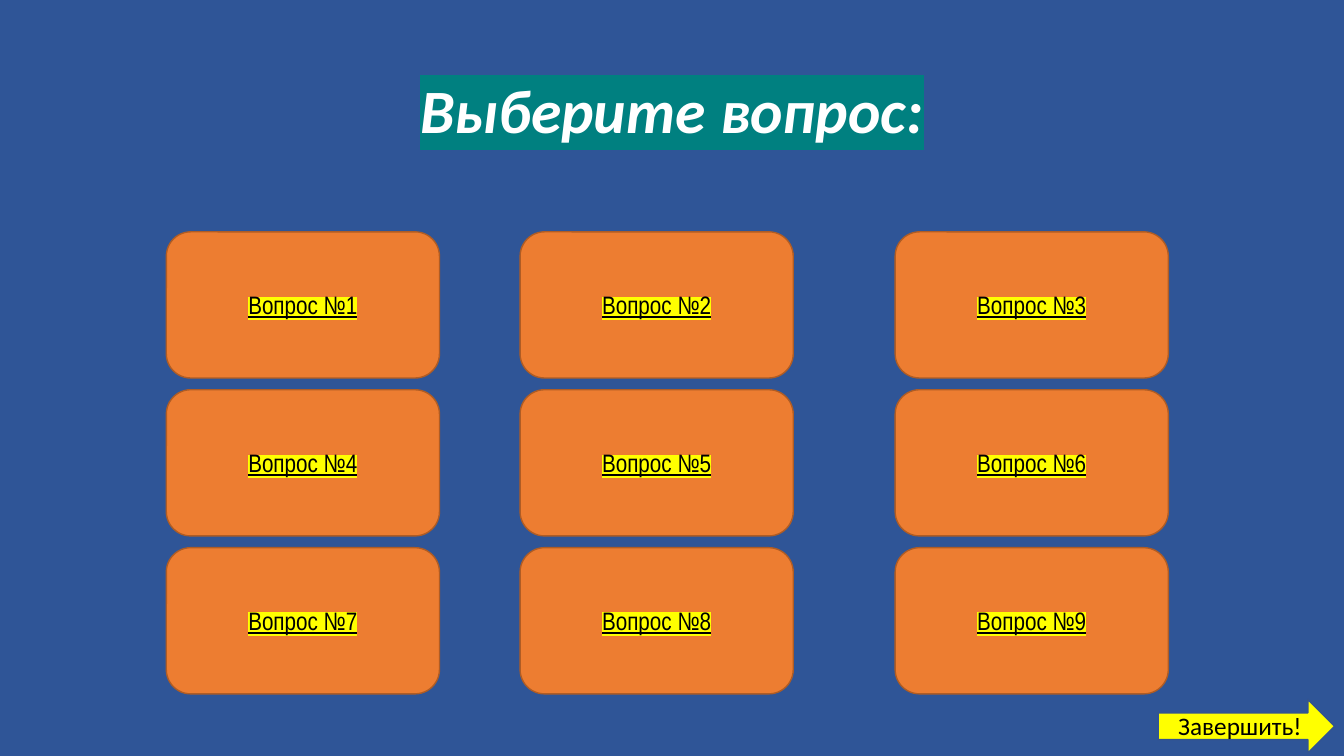
"""Builds a quiz menu slide with a grid of question buttons."""
from lxml.etree import SubElement
from pptx import Presentation
from pptx.dml.color import RGBColor as RGB
from pptx.enum.shapes import MSO_SHAPE as SHAPE
from pptx.enum.text import MSO_ANCHOR as ANCHOR, PP_ALIGN as ALIGN
from pptx.oxml.ns import qn
from pptx.util import Pt

TITLE = "Выберите вопрос:"
QUESTIONS = [f"Вопрос №{n}" for n in range(1, 10)]
FINISH = "Завершить!"

COLORS = {
    "background": "2F5597", "button": "ED7D31", "button_line": "AF5C24",
    "arrow_line": "325491", "teal": "008080", "yellow": "FFFF00",
    "white": "FFFFFF", "black": "000000",
}
COLUMNS = [118.8, 371.5, 639.4]
TOP, ROW_STEP = 165.6, 112.8
BUTTON_W, BUTTON_H = 195.1, 104.4


def color(name):
    return RGB.from_string(COLORS[name])


def write(s, text, size=18, font="Calibri", ink="black", highlight=None,
          align=ALIGN.CENTER, anchor=ANCHOR.MIDDLE, spacing=None,
          bold=False, italic=False, underline=False):
    tf = s.text_frame
    tf.word_wrap = True
    tf.vertical_anchor = anchor
    p = tf.paragraphs[0]
    p.alignment = align
    p.line_spacing = spacing
    r = p.add_run()
    r.text = text
    r.font.size, r.font.name = Pt(size), font
    r.font.bold, r.font.italic, r.font.underline = bold, italic, underline
    r.font.color.rgb = color(ink)
    if highlight:
        props = r.font._element
        mark = SubElement(props, qn("a:highlight"))
        SubElement(mark, qn("a:srgbClr"), val=COLORS[highlight])
        props.find(qn("a:solidFill")).addnext(mark)


def add_box(slide, x, y, w, h):
    return slide.shapes.add_textbox(Pt(x), Pt(y), Pt(w), Pt(h))


def add_shape(slide, kind, x, y, w, h, fill, line):
    s = slide.shapes.add_shape(kind, Pt(x), Pt(y), Pt(w), Pt(h))
    s.shadow.inherit = False
    s.fill.solid()
    s.fill.fore_color.rgb = color(fill)
    s.line.color.rgb = color(line)
    s.line.width = Pt(1)
    return s


def main():
    prs = Presentation()
    prs.slide_width, prs.slide_height = Pt(960), Pt(540)
    slide = prs.slides.add_slide(prs.slide_layouts[6])
    slide.background.fill.solid()
    slide.background.fill.fore_color.rgb = color("background")

    write(add_box(slide, 66, 28.8, 828, 104.4), TITLE, size=44, ink="white",
          highlight="teal", spacing=0.9, bold=True, italic=True)

    for i, question in enumerate(QUESTIONS):
        row, col = divmod(i, len(COLUMNS))
        s = add_shape(slide, SHAPE.ROUNDED_RECTANGLE, COLUMNS[col],
                      TOP + row * ROW_STEP, BUTTON_W, BUTTON_H,
                      "button", "button_line")
        write(s, question, font="Arial Narrow", highlight="yellow", underline=True)

    add_shape(slide, SHAPE.RIGHT_ARROW, 827.3, 499.7, 126, 38.2,
              "yellow", "arrow_line")
    write(add_box(slide, 834.5, 504, 111.6, 28.8), FINISH,
          align=ALIGN.LEFT, anchor=ANCHOR.TOP)
    prs.save("out.pptx")


if __name__ == "__main__":
    main()
